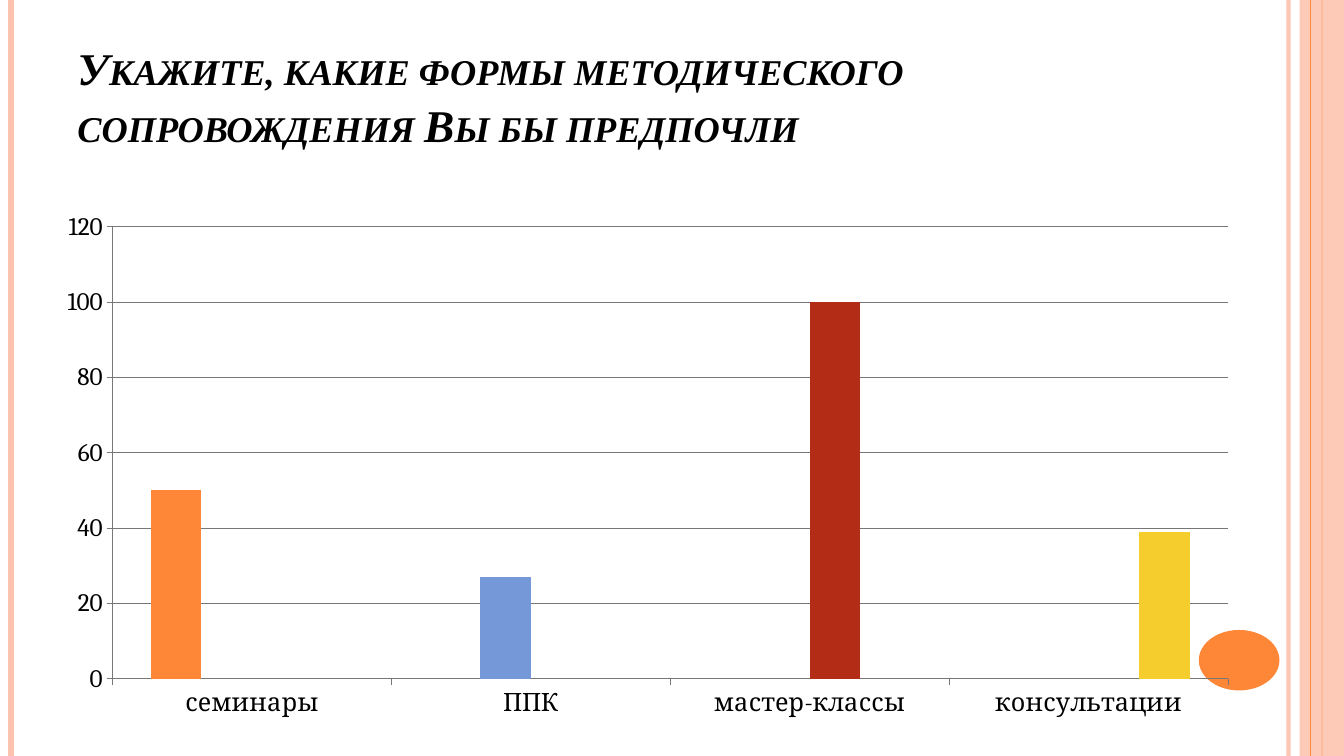
from lxml.etree import SubElement
from pptx import Presentation
from pptx.chart.data import CategoryChartData
from pptx.dml.color import RGBColor
from pptx.enum.chart import XL_CHART_TYPE as ChartType, XL_TICK_MARK as Tick
from pptx.enum.shapes import MSO_CONNECTOR as Connector, MSO_SHAPE as Shape
from pptx.enum.text import MSO_ANCHOR as Anchor
from pptx.oxml.ns import qn
from pptx.util import Inches, Pt

COLORS = {
    "text": "000000", "peach": "FEC3AE", "orange": "FE8637", "blue": "7598D9",
    "red": "B32C16", "yellow": "F5CD2D", "axis": "777777",
}
HEIGHT = 7.5
VOTES = [
    ("семинары", 50, "orange"),
    ("ППК", 27, "blue"),
    ("мастер-классы", 100, "red"),
    ("консультации", 39, "yellow"),
]


def rgb(name):
    return RGBColor.from_string(COLORS[name])


def set_alpha(fill_parent, percent):
    """Make the solid fill directly under fill_parent partly transparent."""
    color = fill_parent.find(qn("a:solidFill"))[0]
    SubElement(color, qn("a:alpha"), val=str(percent * 1000))


def add_run(paragraph, text, *, font, size, color, bold=False, italic=False,
            small_caps=False):
    run = paragraph.add_run()
    run.text = text
    run.font.name, run.font.size = font, Pt(size)
    run.font.bold, run.font.italic = bold, italic
    run.font.color.rgb = rgb(color)
    if small_caps:
        run.font._element.set("cap", "small")


class SurveySlide:
    title_font = "Times New Roman"
    chart_font = "Cambria"

    def __init__(self, prs):
        self.shapes = prs.slides.add_slide(prs.slide_layouts[6]).shapes

    def vertical_line(self, x, color, width, alpha=100):
        rule = self.shapes.add_connector(
            Connector.STRAIGHT, Inches(x), 0, Inches(x), Inches(HEIGHT))
        rule.line.color.rgb = rgb(color)
        rule.line.width = Pt(width)
        properties = rule._element.spPr
        SubElement(properties, qn("a:effectLst"))
        if alpha < 100:
            set_alpha(properties.find(qn("a:ln")), alpha)

    def filled(self, preset, box, color, alpha=100):
        shape = self.shapes.add_shape(preset, *map(Inches, box))
        shape.shadow.inherit = False
        shape.fill.solid()
        shape.fill.fore_color.rgb = rgb(color)
        shape.line.fill.background()
        if alpha < 100:
            set_alpha(shape._element.spPr, alpha)

    def title(self, text, box):
        frame = self.shapes.add_textbox(*map(Inches, box)).text_frame
        frame.word_wrap = True
        frame.vertical_anchor = Anchor.BOTTOM
        heading = frame.paragraphs[0]
        heading.line_spacing = 1.05
        add_run(heading, text, font=self.title_font, size=32.4, color="text",
                bold=True, italic=True, small_caps=True)

    def column_chart(self, votes, box):
        """Draw one series per category, so each column has its own colour."""
        data = CategoryChartData()
        data.categories = [label for label, _, _ in votes]
        for place, (_, value, _) in enumerate(votes):
            data.add_series(f"Series {place + 1}",
                            [value if i == place else None for i in range(len(votes))])
        chart = self.shapes.add_chart(
            ChartType.COLUMN_CLUSTERED, *map(Inches, box), data).chart
        chart.has_legend = chart.has_title = False
        chart.font.name, chart.font.size = self.chart_font, Pt(18)
        chart.font.color.rgb = rgb("text")

        plot = chart.plots[0]
        plot.gap_width, plot.overlap = 150, 0
        plot.vary_by_categories = False
        for series, (_, _, color) in zip(plot.series, votes):
            series.format.fill.solid()
            series.format.fill.fore_color.rgb = rgb(color)

        values = chart.value_axis
        values.minimum_scale, values.maximum_scale, values.major_unit = 0, 120, 20
        values.has_major_gridlines = True
        chart.category_axis.has_major_gridlines = False
        for axis in (values, chart.category_axis):
            axis.major_tick_mark, axis.minor_tick_mark = Tick.OUTSIDE, Tick.NONE
        for part in (values, chart.category_axis, values.major_gridlines):
            part.format.line.color.rgb = rgb("axis")
            part.format.line.width = Pt(0.75)


def main():
    prs = Presentation()
    prs.slide_width, prs.slide_height = Inches(13.33), Inches(HEIGHT)
    slide = SurveySlide(prs)

    slide.vertical_line(12.78, "peach", 3, alpha=93)
    slide.vertical_line(0.11, "peach", 4.5)
    slide.vertical_line(13.11, "orange", 1.5)
    slide.filled(Shape.RECTANGLE, (12.89, 0, 0.44, HEIGHT), "peach", alpha=87)
    slide.vertical_line(13, "orange", 0.75)
    slide.filled(Shape.OVAL, (11.89, 6.25, 0.8, 0.6), "orange")

    slide.title("Укажите, какие формы методического сопровождения Вы бы предпочли",
                (0.67, 0.3, 10.89, 1.25))
    slide.column_chart(VOTES, (0.43, 2, 11.99, 5.23))
    prs.save("out.pptx")


if __name__ == "__main__":
    main()
